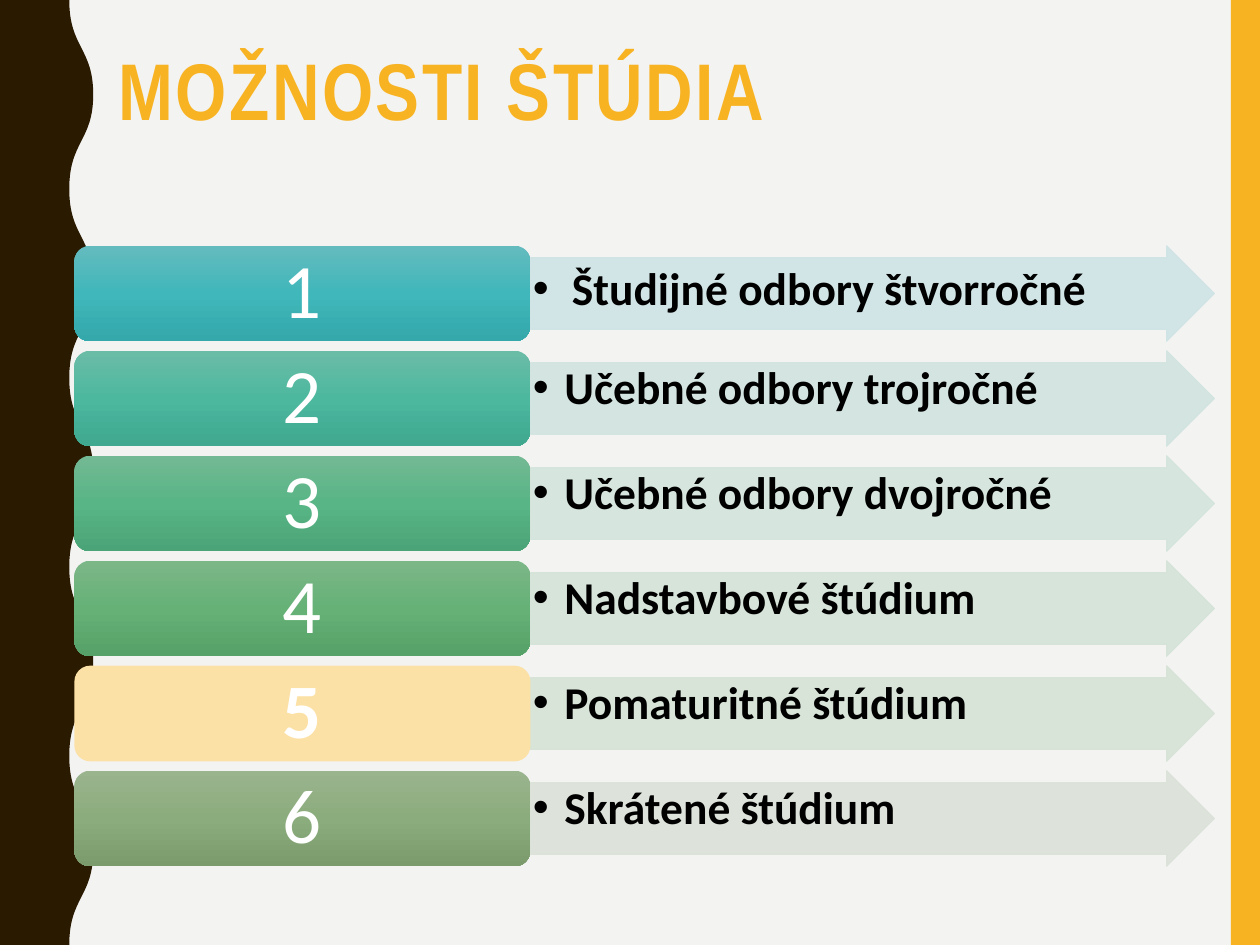
from copy import deepcopy
from dataclasses import dataclass

from lxml import etree
from pptx import Presentation
from pptx import util as u
from pptx.dml.color import RGBColor
from pptx.enum import shapes, text
from pptx.oxml.ns import qn

WIDE, HIGH = 10, 7.5
STEP = HIGH / 9          # height of one grid row
FIRST = 0.26 * HIGH      # top of the first row
BAR = 0.76
LEFT, MID, RIGHT = 0.059 * WIDE, 0.421 * WIDE, 0.964 * WIDE
GOLD, DARK, PAPER = "F8B323", "2A1A00", "F3F3F2"


@dataclass
class Row:
    label: str
    tint: str
    shades: tuple[str, ...]
    bold: bool = False
    indent: float = 0.25
    lead: float = 0.9


ROWS = [
    Row("Študijné odbory štvorročné", "CFE4E5", ("64BBBE", "40B7BB", "34A8AB"),
        indent=0.31, lead=1.0),
    Row("Učebné odbory trojročné", "D1E4E0", ("6BBCA7", "4CB89E", "3FA88F")),
    Row("Učebné odbory dvojročné", "D3E4DB", ("73B994", "58B585", "4BA477")),
    Row("Nadstavbové štúdium", "D4E3D8", ("7CB788", "65B176", "56A167")),
    Row("Pomaturitné štúdium", "D6E3D6", ("FCE1A7",), bold=True),
    Row("Skrátené štúdium", "DBE2D8", ("9AB48E", "8BAC7C", "7B9B6C")),
]


def rgb(code: str) -> RGBColor:
    return RGBColor.from_string(code)


def paint(shape, code: str) -> None:
    shape.shadow.inherit = False
    shape.fill.solid()
    shape.fill.fore_color.rgb = rgb(code)
    shape.line.fill.background()


def shade(shape, codes: tuple[str, ...]) -> None:
    """Vertical gradient with evenly spaced stops."""
    shape.fill.gradient()
    shape.fill.gradient_angle = 270
    group = shape._element.spPr.find(".//" + qn("a:gsLst"))
    while len(group) < len(codes):
        group.append(deepcopy(group[0]))
    for i, (stop, code) in enumerate(zip(shape.fill.gradient_stops, codes)):
        stop.color.rgb = rgb(code)
        stop.position = i / (len(codes) - 1)


def fade(shape, share: int) -> None:
    for color in shape._element.spPr.iter(qn("a:srgbClr")):
        etree.SubElement(color, qn("a:alpha"), val=str(share * 1000))


def add(slide, kind, x: float, y: float, w: float, h: float, code: str):
    shape = slide.shapes.add_shape(kind, *map(u.Inches, (x, y, w, h)))
    paint(shape, code)
    return shape


def write(shape, words: str, size: float, code: str, face: str, bold: bool,
          pads: tuple[float, float], anchor, align, lead: float = 0.9):
    frame = shape.text_frame
    frame.text = words
    frame.word_wrap = True
    frame.vertical_anchor = anchor
    frame.margin_left = frame.margin_right = u.Inches(pads[0])
    frame.margin_top = frame.margin_bottom = u.Inches(pads[1])
    para = frame.paragraphs[0]
    para.alignment, para.line_spacing = align, lead
    font = para.runs[0].font
    font.size, font.name, font.bold = u.Pt(size), face, bold
    font.color.rgb = rgb(code)
    return para


def bullet(para, indent: float) -> None:
    props = para._p.get_or_add_pPr()
    props.set("marL", str(u.Inches(indent)))
    props.set("indent", str(-u.Inches(indent)))
    etree.SubElement(props, qn("a:buFont"), typeface="Arial")
    etree.SubElement(props, qn("a:buChar"), char="•")


def wave(slide) -> None:
    """Dark left band whose edge swings between two columns, in 1/100 inch."""
    low, top, half, turns = 55, 74, 75, 10
    edge = [(top if n % 2 else low, n * half) for n in range(turns + 1)]
    pen = slide.shapes.build_freeform(*edge[0], scale=u.Inches(0.01))
    pen.add_line_segments([*edge[1:], (0, turns * half), (0, 0)], close=True)
    band = pen.convert_to_shape()
    paint(band, DARK)
    # Bend the straight edge pieces into curves
    lines = list(band._element.spPr.iter(qn("a:lnTo")))
    for line, start, end in zip(lines, edge, edge[1:]):
        grow = u.Inches(0.01)
        mid = (start[1] + end[1]) / 2
        curve = etree.Element(qn("a:cubicBezTo"))
        scale = int(line[0].get("y")) / end[1]
        for x, y in ((start[0], mid), (end[0], mid), end):
            etree.SubElement(curve, qn("a:pt"), x=str(round(x * scale)),
                             y=str(round(y * scale)))
        line.getparent().replace(line, curve)


def draw(slide, n: int, row: Row) -> None:
    y = FIRST + n * STEP
    kinds = shapes.MSO_SHAPE
    # Arrow with its label
    arrow = add(slide, kinds.RIGHT_ARROW, MID, y, RIGHT - MID, BAR, row.tint)
    arrow.adjustments[0], arrow.adjustments[1] = 0.75, 0.5
    arrow.line.color.rgb = rgb(row.tint)
    arrow.line.width = u.Pt(0.5)
    fade(arrow, 90)
    para = write(arrow, row.label, 26, "000000", "Calibri", True, (0.02, 0.02),
                 text.MSO_ANCHOR.TOP, text.PP_ALIGN.LEFT, row.lead)
    bullet(para, row.indent)
    # Numbered block
    block = add(slide, kinds.ROUNDED_RECTANGLE, LEFT, y, MID - LEFT, BAR,
                row.shades[0])
    if len(row.shades) > 1:
        shade(block, row.shades)
    write(block, str(n + 1), 44, "FFFFFF", "Calibri", row.bold, (0.18, 0.09),
          text.MSO_ANCHOR.MIDDLE, text.PP_ALIGN.CENTER)


def main() -> None:
    deck = Presentation()
    deck.slide_width, deck.slide_height = u.Inches(WIDE), u.Inches(HIGH)
    slide = deck.slides.add_slide(deck.slide_layouts[6])
    slide.background.fill.solid()
    slide.background.fill.fore_color.rgb = rgb(PAPER)

    # Side bands
    add(slide, shapes.MSO_SHAPE.RECTANGLE, 0.977 * WIDE, 0, 0.023 * WIDE, HIGH,
        GOLD)
    wave(slide)

    for n, row in enumerate(ROWS):
        draw(slide, n, row)

    # Title
    box = slide.shapes.add_textbox(*map(u.Inches, (0.84, 0.36, 8.83, 1.26)))
    para = write(box, "MOŽNOSTI ŠTÚDIA", 45.9, GOLD, "Arial Narrow", True,
                 (0.1, 0.05), text.MSO_ANCHOR.TOP, text.PP_ALIGN.LEFT)
    para.runs[0].font._element.set("spc", "150")

    deck.save("out.pptx")


if __name__ == "__main__":
    main()
